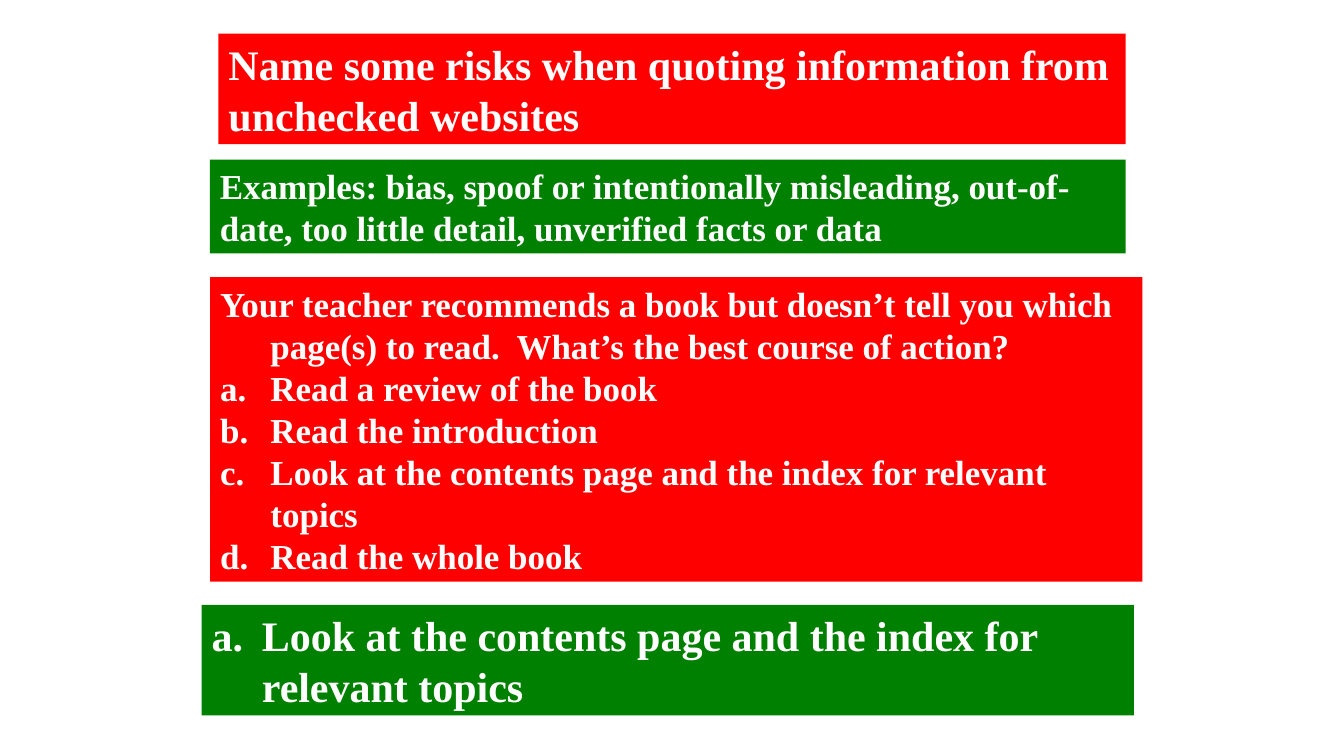
from lxml import etree
from pptx import Presentation
from pptx.dml.color import RGBColor
from pptx.enum.text import MSO_ANCHOR, MSO_AUTO_SIZE, PP_ALIGN
from pptx.oxml.ns import qn
from pptx.util import Pt

TOP = MSO_ANCHOR.TOP
FIXED_SIZE = MSO_AUTO_SIZE.NONE
LEFT = PP_ALIGN.LEFT

COLORS = {"question": "FF0000", "answer": "008000", "text": "FFFFFF"}
FONT = "Times New Roman"
HANGING = Pt(36)


def format_panel(panel, role, box, size, lines, hanging=False, first_option=None):
    """Fill a panel with lines; those from first_option on are lettered."""
    panel.left, panel.top, panel.width, panel.height = map(Pt, box)
    panel.fill.solid()
    panel.fill.fore_color.rgb = RGBColor.from_string(COLORS[role])
    frame = panel.text_frame
    frame.text = "\n".join(lines)
    frame.word_wrap = True
    frame.vertical_anchor = TOP
    frame.auto_size = FIXED_SIZE
    for index, paragraph in enumerate(frame.paragraphs):
        paragraph.alignment = LEFT
        paragraph.space_before = Pt(0)
        font = paragraph.runs[0].font
        font.name, font.size, font.bold = FONT, Pt(size), True
        font.color.rgb = RGBColor.from_string(COLORS["text"])
        properties = paragraph._p.get_or_add_pPr()
        indent = HANGING if hanging else 0
        properties.set("marL", str(indent))
        properties.set("indent", str(-indent))
        if first_option is not None and index >= first_option:
            etree.SubElement(properties, qn("a:buAutoNum"), type="alphaLcPeriod")
        else:
            etree.SubElement(properties, qn("a:buNone"))


presentation = Presentation()
presentation.slide_width, presentation.slide_height = Pt(960), Pt(540)
slide = presentation.slides.add_slide(presentation.slide_layouts[1])
risks_question = slide.shapes.title
book_question = slide.placeholders[1]
risks_answer, book_answer = (slide.shapes.add_textbox(0, 0, 0, 0) for _ in range(2))

format_panel(risks_question, "question", (156, 24, 648, 79), 30,
             ["Name some risks when quoting information from unchecked websites"])
format_panel(risks_answer, "answer", (150, 114, 654, 67), 25,
             ["Examples: bias, spoof or intentionally misleading, out-of-date, "
              "too little detail, unverified facts or data"])

best_action = "Look at the contents page and the index for relevant topics"
format_panel(book_question, "question", (150, 198, 666, 217.5), 25,
             ["Your teacher recommends a book but doesn’t tell you which page(s) to read.  "
              "What’s the best course of action?",
              "Read a review of the book",
              "Read the introduction",
              best_action,
              "Read the whole book"],
             hanging=True, first_option=1)
format_panel(book_answer, "answer", (144, 432, 666, 79), 30, [best_action],
             hanging=True, first_option=0)

presentation.save("out.pptx")
